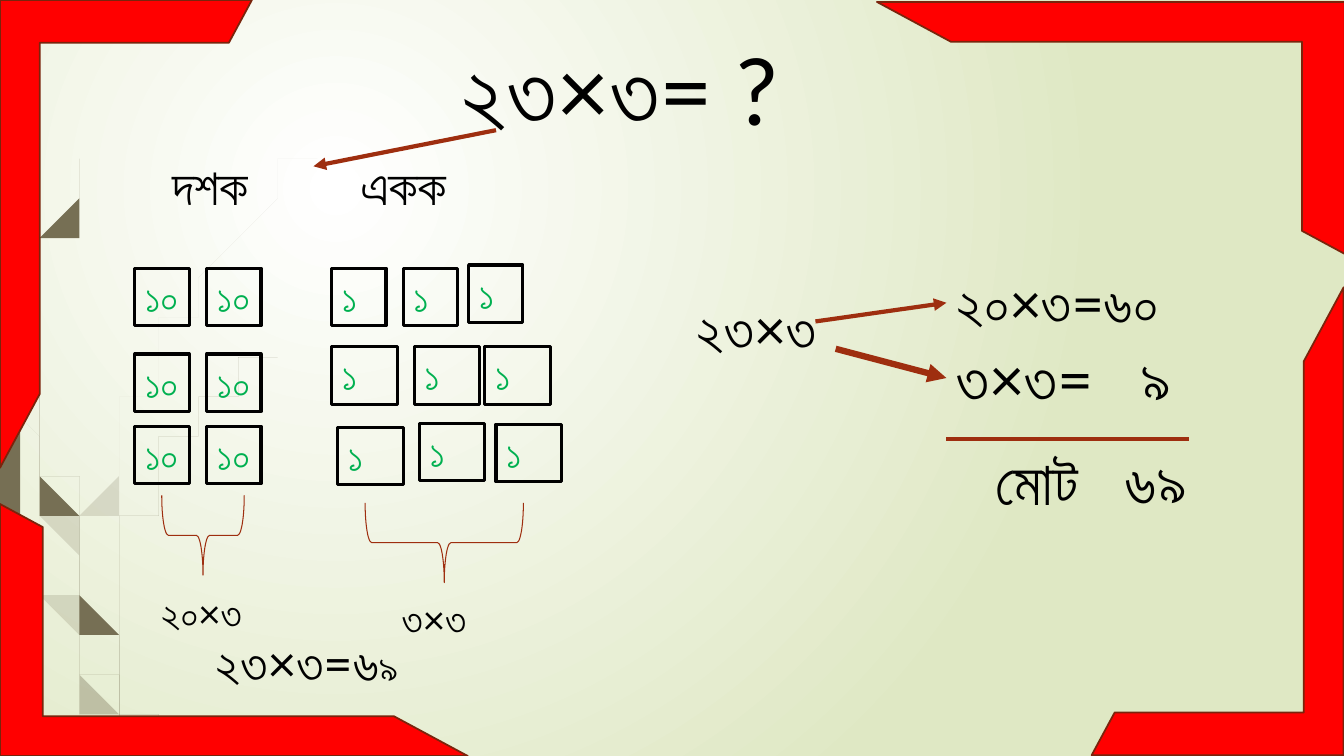
from dataclasses import dataclass
from itertools import product

from lxml.etree import SubElement
from pptx import Presentation
from pptx.dml.color import RGBColor as Rgb
from pptx.enum.shapes import MSO_CONNECTOR as Link, MSO_SHAPE as Form
from pptx.enum.text import MSO_ANCHOR as Anchor, MSO_AUTO_SIZE as Fit, PP_ALIGN as Align
from pptx.oxml.ns import qn
from pptx.util import Cm, Pt


@dataclass
class Theme:
    font: str = "Lato"
    ink: Rgb = Rgb(0, 0, 0)
    digit: Rgb = Rgb(0x00, 0xB0, 0x50)
    red: Rgb = Rgb(0xFF, 0, 0)
    edge: Rgb = Rgb(0x7A, 0x24, 0x0C)
    rust: Rgb = Rgb(0x9E, 0x2E, 0x0F)
    grass: Rgb = Rgb(0x76, 0x6F, 0x54)
    white: Rgb = Rgb(0xFF, 0xFF, 0xFF)
    pale: Rgb = Rgb(0xDF, 0xE8, 0xC4)
    title: int = 66
    total: int = 44
    sum: int = 40
    head: int = 36
    small: int = 28


theme = Theme()
deck = Presentation()
deck.slide_width, deck.slide_height = Cm(33.87), Cm(19.05)
slide = deck.slides.add_slide(deck.slide_layouts[6])
shapes = slide.shapes


def write(shape, text, size, color):
    frame = shape.text_frame
    frame.word_wrap = True
    frame.auto_size = Fit.SHAPE_TO_FIT_TEXT
    frame.vertical_anchor = Anchor.TOP
    para = frame.paragraphs[0]
    para.text = text
    para.alignment = Align.LEFT
    font = para.runs[0].font
    font.name, font.size, font.color.rgb = theme.font, Pt(size), color
    return para


def draw(form, left, top, width, height, fill=None, line=None, weight=1.0, turn=0):
    """Add a preset shape; a missing fill or line is left empty."""
    shape = shapes.add_shape(form, Cm(left), Cm(top), Cm(width), Cm(height))
    shape.shadow.inherit = False
    shape.rotation = turn
    if fill is None:
        shape.fill.background()
    else:
        shape.fill.solid()
        shape.fill.fore_color.rgb = fill
    if line is None:
        shape.line.fill.background()
    else:
        shape.line.color.rgb, shape.line.width = line, Pt(weight)
    return shape


# Background: round gradient with its centre in the upper left
back = slide.background.fill
back.gradient()
for stop, color in zip(back.gradient_stops, (theme.white, theme.pale)):
    stop.color.rgb = color
grad = slide.background._cSld.find(".//" + qn("a:gradFill"))
for old in grad.findall(qn("a:lin")):
    grad.remove(old)
round_ = SubElement(grad, qn("a:path"), path="circle")
SubElement(round_, qn("a:fillToRect"), l="50000", t="50000", r="100000", b="100000")

# Grass: each blade is a spine of (x, y, width) in cm, smoothed and tapered
blades = [
    (20, [(0.36, 8.76, 0), (1.53, 13.23, 0.1), (2.26, 15.2, 0.1), (3.17, 17.6, 0.12),
          (3.87, 19.07, 0.13)]),
    (20, [(0, 7.4, 0), (0.28, 8.89, 0.03), (0.75, 11.93, 0.08), (1.7, 15.75, 0.13),
          (2.35, 17.47, 0.1), (2.96, 19.07, 0.13)]),
    (20, [(7.92, 3.89, 0), (5.8, 6.2, 0.03), (4.04, 8.84, 0.05), (2.75, 11.72, 0.08),
          (2.2, 14.85, 0.08), (2.27, 16.4, 0.1), (2.55, 17.8, 0.12), (3.09, 19.07, 0.13)]),
    (100, [(0.09, 0, 0.03), (0.18, 2.79, 0.04), (0.46, 5.92, 0.05), (0.88, 9.02, 0.08),
           (1.45, 12.12, 0.04), (1.78, 14.12, 0.1), (2.42, 16.71, 0.13), (2.85, 17.9, 0.1),
           (3.28, 19.03, 0.1)]),
    (100, [(1.78, 3.58, 0), (1.45, 6.22, 0.05), (1.33, 8.86, 0.05), (1.42, 11.4, 0.08),
           (1.54, 12.1, 0.06), (2.3, 15.01, 0.12), (2.74, 16.25, 0.1), (3.4, 17.95, 0.11),
           (3.93, 19.03, 0.13)]),
    (100, [(6.6, 8.74, 0), (5.19, 10.3, 0.03), (3.99, 12.07, 0.05), (3.14, 14, 0.07),
           (2.76, 16.05, 0.11), (2.85, 17.2, 0.1), (3.05, 18.2, 0.1), (3.4, 19.03, 0.08)]),
]
steps = 6
for alpha, spine in blades:
    ends = [spine[0], *spine, spine[-1]]
    curve = []
    for quad in zip(ends, ends[1:], ends[2:], ends[3:]):
        for i in range(steps):
            t = i / steps
            curve.append([
                b + t * (c - a) / 2 + t * t * (2 * a - 5 * b + 4 * c - d) / 2
                + t ** 3 * (3 * b - a - 3 * c + d) / 2
                for a, b, c, d in zip(*quad)])
    curve.append(spine[-1])
    rim = [(x - w / 2, y) for x, y, w in curve] + [(x + w / 2, y) for x, y, w in curve[::-1]]
    pen = shapes.build_freeform(*rim[0], scale=Cm(1))
    pen.add_line_segments(rim[1:])
    blade = pen.convert_to_shape()
    blade.shadow.inherit = False
    blade.line.fill.background()
    blade.fill.solid()
    blade.fill.fore_color.rgb = theme.grass
    tint = blade._element.spPr.find(".//" + qn("a:srgbClr"))
    SubElement(tint, qn("a:alpha"), val=str(alpha * 1000))

# Red corners
draw(Form.RECTANGLE, 0, 0, 0.51, 19.05, theme.grass)
for left, top, turn in [(0, 0, 0), (2.72, 9.98, 270), (27.51, 7.24, 180), (24.82, -2.67, 90)]:
    corner = draw(Form.HALF_FRAME, left, top, 6.35, 11.79, theme.red, theme.edge, 1.25, turn)
    corner.adjustments[0], corner.adjustments[1] = 0.17, 0.158

# Tens and ones boxes
tens = [(x, y, 1.37, "১০") for y, x in product((6.76, 8.92, 10.74), (3.4, 5.21))]
ones = [(x, y, w, "১") for x, y, w in [
    (8.36, 6.76, 1.37), (10.16, 6.76, 1.37), (11.81, 6.68, 1.37),
    (8.36, 8.74, 1.65), (10.44, 8.74, 1.65), (12.22, 8.74, 1.65),
    (8.51, 10.77, 1.65), (10.57, 10.67, 1.65), (12.5, 10.69, 1.65)]]
for left, top, width, digit in tens + ones:
    box = draw(Form.RECTANGLE, left, top, width, 1.45, line=theme.ink, weight=2.25)
    write(box, digit, theme.small, theme.digit)

for left, top, span in [(4.11, 12.45, 2.08), (10.19, 11.68, 3.99)]:
    draw(Form.RIGHT_BRACE, left, top, 2.01, span, line=theme.rust, weight=0.75, turn=90)

# Texts: left, top, width, height, size, words, tab stop
texts = [
    (11.38, 0.71, 9.17, 3.07, theme.title, "২৩×৩= ?", 0),
    (4.09, 3.78, 9.17, 1.8, theme.head, "দশক\tএকক", 4.75),
    (3.81, 14.73, 2.62, 1.45, theme.small, "২০×৩", 0),
    (9.88, 14.88, 2.62, 1.45, theme.small, "৩×৩", 0),
    (5.18, 15.8, 6.65, 1.8, theme.head, "২৩×৩=৬", 0),
    (17.3, 7.29, 4.78, 1.96, theme.sum, "২৩×৩", 0),
    (24.84, 11.07, 6.65, 2.13, theme.total, "মোট\t৬৯", 3.25),
    (23.85, 6.65, 6.12, 1.96, theme.sum, "২০×৩=৬০", 0),
    (23.85, 8.46, 7.01, 2.13, theme.total, "৩×৩=\t৯", 4.65),
]
notes = {}
for left, top, width, height, size, words, tab in texts:
    note = shapes.add_textbox(Cm(left), Cm(top), Cm(width), Cm(height))
    para = write(note, words, size, theme.ink)
    notes[words] = note
    if tab:
        stops = SubElement(para._p.get_or_add_pPr(), qn("a:tabLst"))
        SubElement(stops, qn("a:tab"), pos=str(Cm(tab)), algn="l")

last = notes["২৩×৩=৬"].text_frame.paragraphs[0].add_run()
last.text = "৯"
last.font.name, last.font.size, last.font.color.rgb = theme.font, Pt(theme.small), theme.ink

# Sum line and arrows: start, end, weight, arrowhead, joined text
links = [
    (23.85, 11.07, 29.97, 11.07, 3, False, None),
    (20.55, 8.1, 23.85, 7.63, 3, True, "২০×৩=৬০"),
    (21.06, 8.79, 23.85, 9.53, 4.5, True, "৩×৩=\t৯"),
    (12.5, 3.28, 7.9, 4.19, 3, True, None),
]
for x1, y1, x2, y2, weight, head, goal in links:
    link = shapes.add_connector(Link.STRAIGHT, Cm(x1), Cm(y1), Cm(x2), Cm(y2))
    link.line.color.rgb, link.line.width = theme.rust, Pt(weight)
    if goal:
        link.end_connect(notes[goal], 1)
    if head:
        SubElement(link.line._get_or_add_ln(), qn("a:tailEnd"), type="triangle")
    SubElement(link._element.spPr, qn("a:effectLst"))

deck.save("out.pptx")
